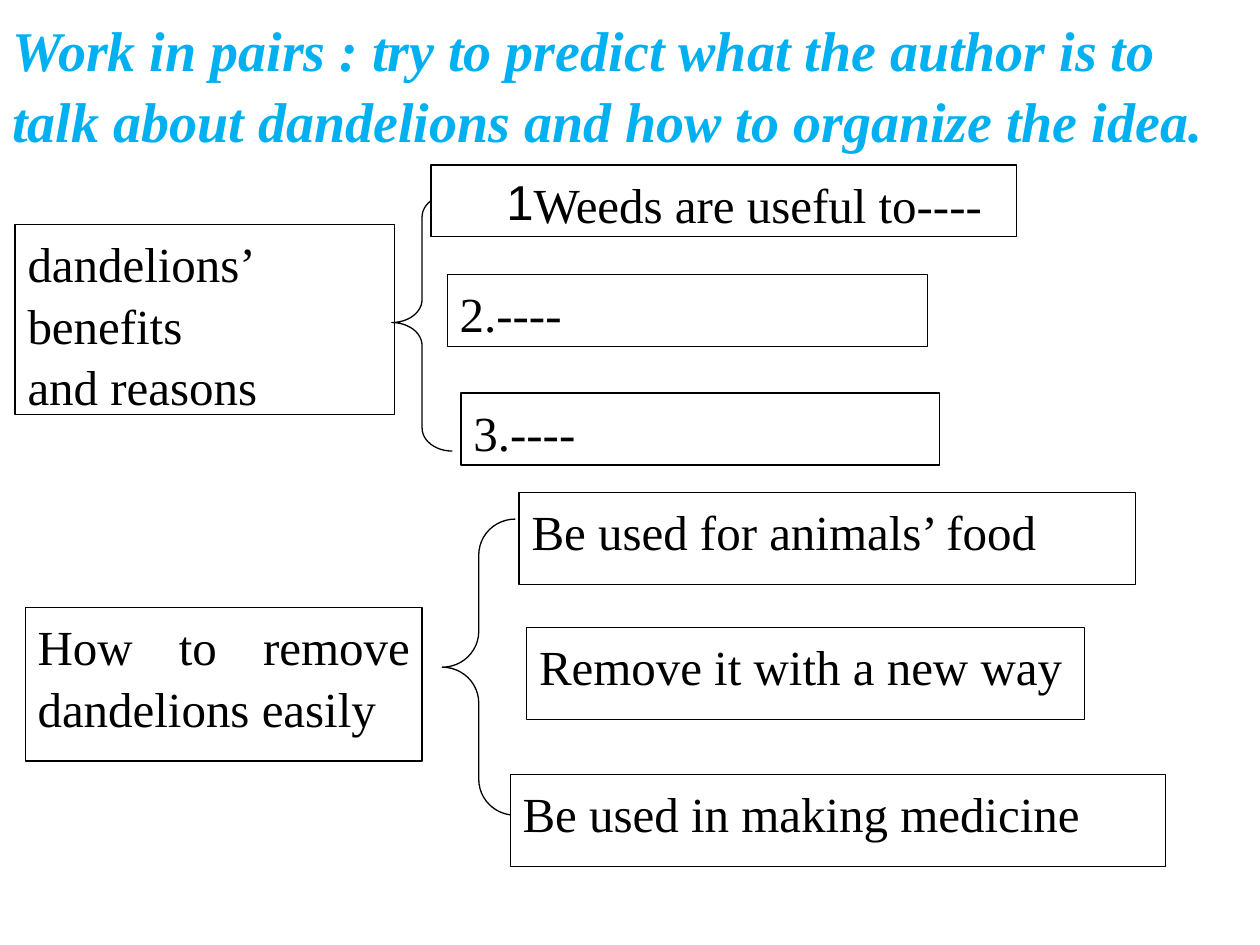
import pptx
import pptx.util
import pptx.dml.color
import pptx.enum.shapes
import pptx.enum.text
import lxml.etree
import pptx.oxml.ns

Inches, Pt = pptx.util.Inches, pptx.util.Pt
SHAPE = pptx.enum.shapes.MSO_SHAPE
ALIGN = pptx.enum.text.PP_ALIGN


def color(hex_code):
    return pptx.dml.color.RGBColor.from_string(hex_code)


def write(paragraph, words, size, hex_code):
    paragraph.line_spacing = 1.05
    run = paragraph.add_run()
    run.text = words
    run.font.name = "Times New Roman"
    run.font.size = Pt(size)
    run.font.color.rgb = color(hex_code)
    return run


deck = pptx.Presentation()
deck.slide_width, deck.slide_height = Inches(10), Inches(7.5)
slide = deck.slides.add_slide(deck.slide_layouts[6])

task = slide.shapes.add_textbox(Inches(0), Inches(0.05), Inches(9.72), Inches(1.18))
task.text_frame.word_wrap = True
prompt = write(
    task.text_frame.paragraphs[0],
    "Work in pairs : try to predict what the author is to talk about dandelions and how to organize the idea.",
    32,
    "00B0F0",
)
prompt.font.bold = prompt.font.italic = True

WEEDS = "Weeds are useful to----"
branches = [
    (
        (3.11, 1.54, 0.48, 2.04, 0.38),
        [
            (0.12, 1.78, 3.01, 1.51, ["dandelions’ benefits ", "and reasons"]),
            (3.55, 2.18, 3.81, 0.57, ["2.----"]),
            (3.66, 3.12, 3.8, 0.57, ["3.----"]),
            (3.42, 1.31, 4.65, 0.57, [WEEDS]),
        ],
    ),
    (
        (3.51, 4.12, 0.58, 2.35, 0.49),
        [
            (0.2, 4.82, 3.15, 1.22, ["How to remove dandelions easily"]),
            (4.12, 3.91, 4.89, 0.73, ["Be used for animals’ food"]),
            (4.18, 4.98, 4.43, 0.73, ["Remove it with a new way"]),
            (4.05, 6.15, 5.2, 0.73, ["Be used in making medicine"]),
        ],
    ),
]

for (*brace_place, curve), ideas in branches:
    branch = slide.shapes.add_group_shape()
    for position, (*place, lines) in enumerate(ideas):
        if position == 1:
            brace = branch.shapes.add_shape(SHAPE.LEFT_BRACE, *map(Inches, brace_place))
            brace.adjustments[0] = curve
            brace.shadow.inherit = False
            brace.fill.background()
            brace.line.color.rgb = color("000000")
            brace.line.width = Pt(0.75)
        idea = branch.shapes.add_shape(SHAPE.RECTANGLE, *map(Inches, place))
        idea.shadow.inherit = False
        idea.fill.solid()
        idea.fill.fore_color.rgb = color("FFFFFF")
        idea.line.color.rgb = color("000000")
        idea.line.width = Pt(0.75)
        frame = idea.text_frame
        frame.word_wrap = True
        frame.vertical_anchor = pptx.enum.text.MSO_ANCHOR.TOP
        for number, line in enumerate(lines):
            paragraph = frame.add_paragraph() if number else frame.paragraphs[0]
            paragraph.alignment = ALIGN.JUSTIFY
            write(paragraph, line, 28, "000000")
            if line == WEEDS:
                paragraph.alignment = ALIGN.LEFT
                paragraph.level = 1
                paragraph.space_after = Pt(10)
                properties = paragraph.runs[0]._r.getparent().pPr
                properties.set("marL", str(Inches(0.5)))
                properties.set("indent", "0")
                for tag, key, value in (("a:buFont", "typeface", "Arial"), ("a:buChar", "char", "1")):
                    bullet = lxml.etree.SubElement(properties, pptx.oxml.ns.qn(tag))
                    bullet.set(key, value)

deck.save("out.pptx")
